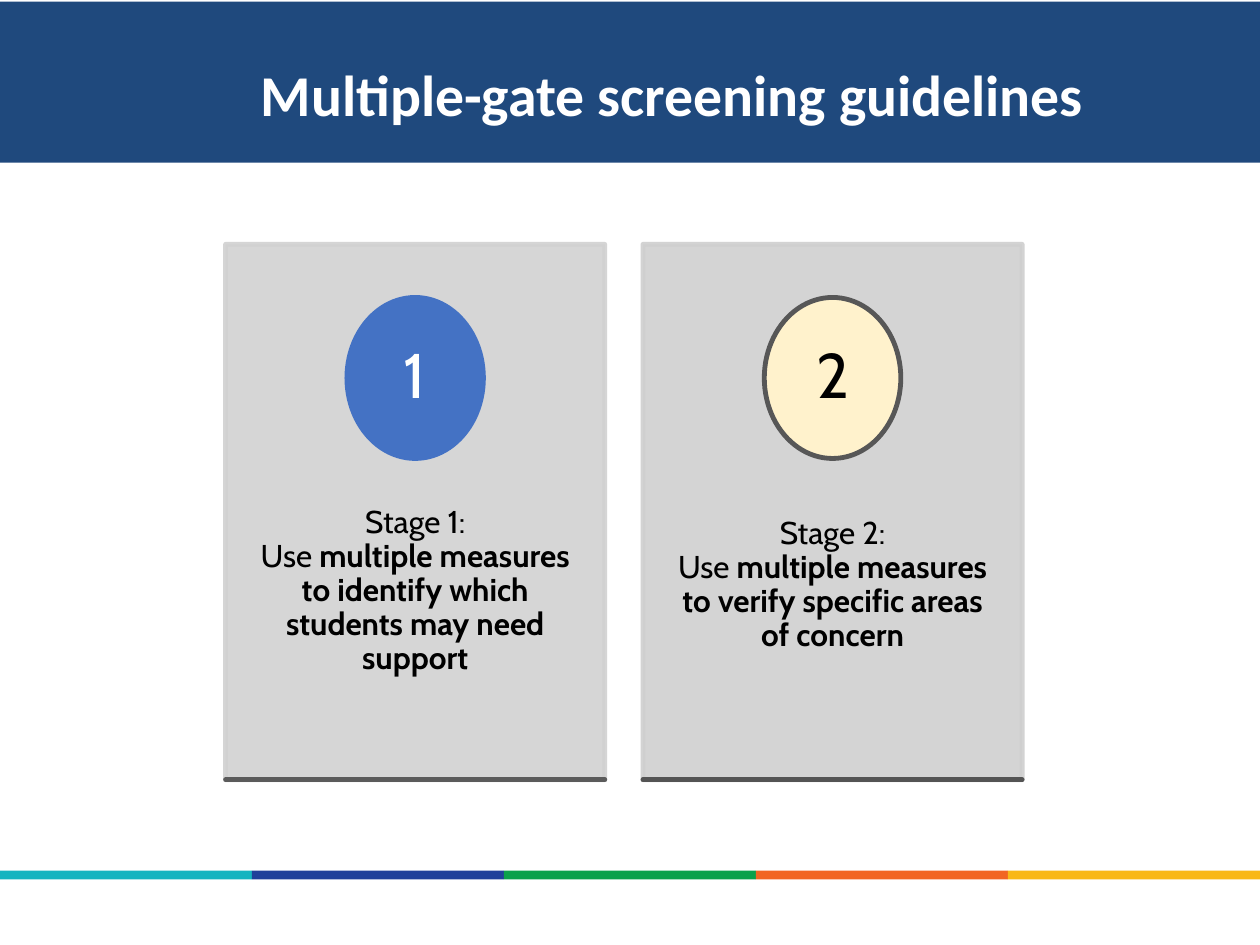
from pptx import Presentation
from pptx.dml.color import RGBColor
from pptx.enum.shapes import MSO_CONNECTOR as LINK, MSO_SHAPE as SHAPE
from pptx.enum.text import MSO_ANCHOR as ANCHOR, PP_ALIGN as ALIGN
from pptx.oxml import parse_xml
from pptx.oxml.ns import nsdecls, qn
from pptx.util import Pt

WIDE, HIGH = 720, 540
CARD_W, CARD_H, CARD_TOP = 216.7, 306, 139.6
CARD_X, PITCH = 128.9, 238.5
EDGE = 2.75
COLORS = {
    "band": "1F497D", "white": "FFFFFF", "black": "000000",
    "card1": "D1D1D1", "card2": "CFCFCF",
    "blue": "4472C4", "cream": "FFF2CC", "ring": "575757",
    "rule1": "5B5B5B", "rule2": "545454",
}
STRIPES = ["14B4C0", "20409A", "0BA14B", "F26522", "F9B817"]
STAGES = [
    dict(num="1", name="Stage 1:", goal="multiple measures to identify which students may need support",
         card="card1", disc="blue", ring="blue", ink="white", rule="rule1", top=270),
    dict(num="2", name="Stage 2:", goal="multiple measures to verify specific areas of concern",
         card="card2", disc="cream", ring="ring", ink="black", rule="rule2", top=276),
]


def rgb(name):
    return RGBColor.from_string(COLORS.get(name, name))


def fade(fill, percent):
    """Set the opacity of a solid fill element."""
    color = fill.find(qn("a:srgbClr"))
    color.append(parse_xml(f'<a:alpha {nsdecls("a")} val="{percent * 1000}"/>'))


def add_box(slide, kind, x, y, w, h, fill, line=None):
    box = slide.shapes.add_shape(kind, Pt(x), Pt(y), Pt(w), Pt(h))
    box.shadow.inherit = False
    box.fill.solid()
    box.fill.fore_color.rgb = rgb(fill)
    if line:
        box.line.color.rgb = rgb(line)
        box.line.width = Pt(EDGE)
    else:
        box.line.fill.background()
    return box


def add_rule(slide, x, y, w, color):
    rule = slide.shapes.add_connector(LINK.STRAIGHT, Pt(x), Pt(y), Pt(x + w), Pt(y))
    rule.line.color.rgb = rgb(color)
    rule.line.width = Pt(EDGE)
    rule.line._get_or_add_ln().set("cap", "rnd")
    rule._element.spPr.append(parse_xml(f'<a:effectLst {nsdecls("a")}/>'))


def set_frame(frame, side, top, anchor):
    frame.word_wrap = True
    frame.vertical_anchor = anchor
    frame.margin_left = frame.margin_right = Pt(side)
    frame.margin_top = frame.margin_bottom = Pt(top)


def add_run(para, text, size, color, face="Cabin", bold=False):
    run = para.add_run()
    run.text = text
    font = run.font
    font.name, font.size, font.bold = face, Pt(size), bold
    font.color.rgb = rgb(color)


def set_para(para, align):
    para.alignment = align
    para.line_spacing = 0.9
    para.space_before = Pt(0)
    return para


def add_text(slide, x, y, w, h, side, top, anchor, lines, size, color):
    """Add a centred text box; each line is a list of (text, bold) runs."""
    frame = slide.shapes.add_textbox(Pt(x), Pt(y), Pt(w), Pt(h)).text_frame
    set_frame(frame, side, top, anchor)
    for i, line in enumerate(lines):
        para = frame.add_paragraph() if i else frame.paragraphs[0]
        set_para(para, ALIGN.CENTER)
        for text, bold in line:
            add_run(para, text, size, color, bold=bold)


def add_title(slide, text):
    title = slide.shapes.title
    title.left, title.top, title.width, title.height = Pt(144), Pt(0), Pt(579), Pt(92)
    frame = title.text_frame
    set_frame(frame, 5, 3, ANCHOR.TOP)
    frame.margin_top = Pt(38)
    para = set_para(frame.paragraphs[0], ALIGN.LEFT)
    add_run(para, text, 33, "white", "Calibri", True)


def add_stage(slide, x, stage):
    card = add_box(slide, SHAPE.RECTANGLE, x, CARD_TOP, CARD_W, CARD_H,
                   stage["card"], stage["card"])
    for fill in card._element.spPr.iter(qn("a:solidFill")):
        fade(fill, 89)
    base = CARD_TOP + CARD_H
    top = stage["top"]
    add_text(slide, x, top, CARD_W, 440 - top, 14, 19.5, ANCHOR.TOP,
             [[(stage["name"], False)], [("Use ", False), (stage["goal"], True)]],
             18, "black")
    mid = x + CARD_W / 2
    add_box(slide, SHAPE.OVAL, mid - 39, 170, 78, 92, stage["disc"], stage["ring"])
    add_text(slide, mid - 27.5, 183.5, 55, 65, 5, 1, ANCHOR.MIDDLE,
             [[(stage["num"], False)]], 36, stage["ink"])
    add_rule(slide, x, base, CARD_W, stage["rule"])


def main():
    deck = Presentation()
    deck.slide_width, deck.slide_height = Pt(WIDE), Pt(HIGH)
    slide = deck.slides.add_slide(deck.slide_layouts[5])
    band = add_box(slide, SHAPE.RECTANGLE, 0, 1, WIDE, 92, "band")
    slide.shapes.title._element.addprevious(band._element)
    step = WIDE / len(STRIPES)
    for i, color in enumerate(STRIPES):
        add_box(slide, SHAPE.RECTANGLE, i * step, 497.5, step, 5, color)
    add_title(slide, "Multiple-gate screening guidelines")
    for i, stage in enumerate(STAGES):
        add_stage(slide, CARD_X + i * PITCH, stage)
    deck.save("out.pptx")


if __name__ == "__main__":
    main()
